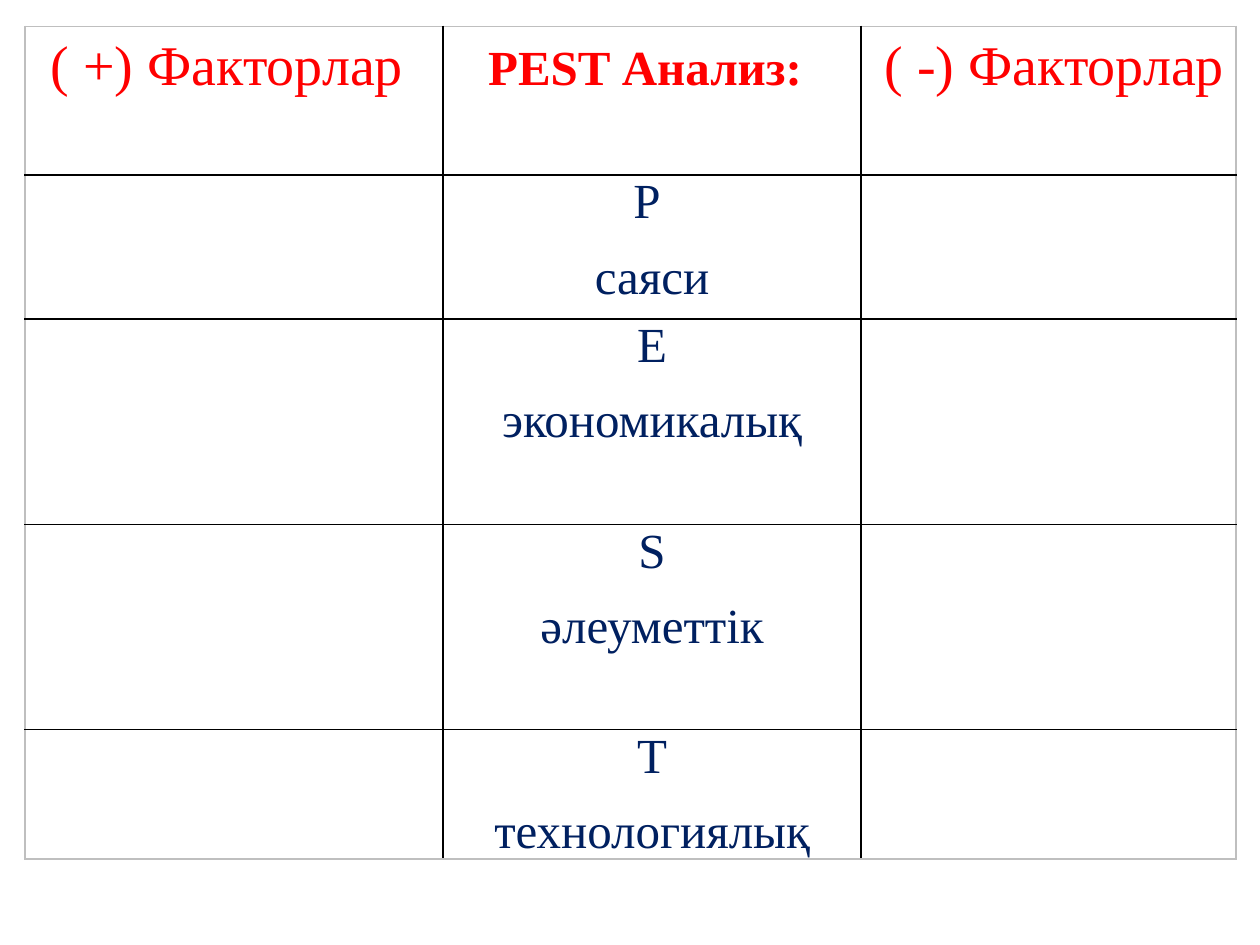
from dataclasses import dataclass

from lxml import etree
from pptx import Presentation
from pptx import util as u
from pptx.dml.color import RGBColor
from pptx.enum import text
from pptx.oxml import ns


@dataclass
class Theme:
    face: str = "Times New Roman"
    head: str = "FF0000"
    body: str = "002060"
    rule: str = "000000"
    edge: str = "BFBFBF"
    large: int = 32
    small: int = 28


theme = Theme()


def style(font, size, color, bold=False):
    font.name = theme.face
    font.size = u.Pt(size)
    font.bold = bold
    font.color.rgb = RGBColor.from_string(color)


def border(cell, side, color):
    props = cell._tc.get_or_add_tcPr()
    line = etree.SubElement(props, ns.qn("a:ln" + side), w=str(u.Pt(1)))
    fill = etree.SubElement(line, ns.qn("a:solidFill"))
    etree.SubElement(fill, ns.qn("a:srgbClr"), val=color)


heads = ["( +) Факторлар ", "PEST Анализ:", "( -) Факторлар"]
factors = [
    ("P ", "саяси"),
    ("E", "экономикалық"),
    ("S", "әлеуметтік"),
    ("T", "технологиялық"),
]
widths = [8.43, 8.43, 7.56]
heights = [3, 2.9, 4.14, 4.14, 2.49]

deck = Presentation()
deck.slide_width, deck.slide_height = u.Cm(25.4), u.Cm(19.05)
slide = deck.slides.add_slide(deck.slide_layouts[6])
frame = slide.shapes.add_table(
    len(heights), len(widths), u.Cm(0.5), u.Cm(0.53),
    u.Cm(sum(widths)), u.Cm(sum(heights)))
table = frame.table
table.first_row = False
table.horz_banding = False
for col, width in zip(table.columns, widths):
    col.width = u.Cm(width)
for row, height in zip(table.rows, heights):
    row.height = u.Cm(height)

for r in range(len(heights)):
    for c in range(len(widths)):
        cell = table.cell(r, c)
        cell.margin_left = cell.margin_right = u.Cm(0.18)
        cell.margin_top = cell.margin_bottom = 0
        outer = {"L": c == 0, "R": c == len(widths) - 1,
                 "T": r == 0, "B": r == len(heights) - 1}
        for side, edge in outer.items():
            border(cell, side, theme.edge if edge else theme.rule)
        cell.fill.background()

for c, head in enumerate(heads):
    para = table.cell(0, c).text_frame.paragraphs[0]
    para.alignment = text.PP_ALIGN.CENTER
    para.line_spacing = 1.15
    para.space_before = para.space_after = u.Pt(6)
    run = para.add_run()
    run.text = head
    if c == 1:
        style(run.font, theme.small, theme.head, True)
        gap = para.add_run()
        gap.text = " "
        style(gap.font, theme.large, theme.head)
    else:
        style(para.font, theme.large, theme.head)
    if c == 2:
        props = para._p.get_or_add_pPr()
        props.set("marL", str(u.Cm(0.23)))
        props.set("indent", "0")

for r, words in enumerate(factors, 1):
    body = table.cell(r, 1).text_frame
    body.text = "\n".join(words)
    for para in body.paragraphs:
        para.alignment = text.PP_ALIGN.CENTER
        para.space_before = para.space_after = u.Pt(6)
        style(para.font, theme.small, theme.body)

deck.save("out.pptx")
